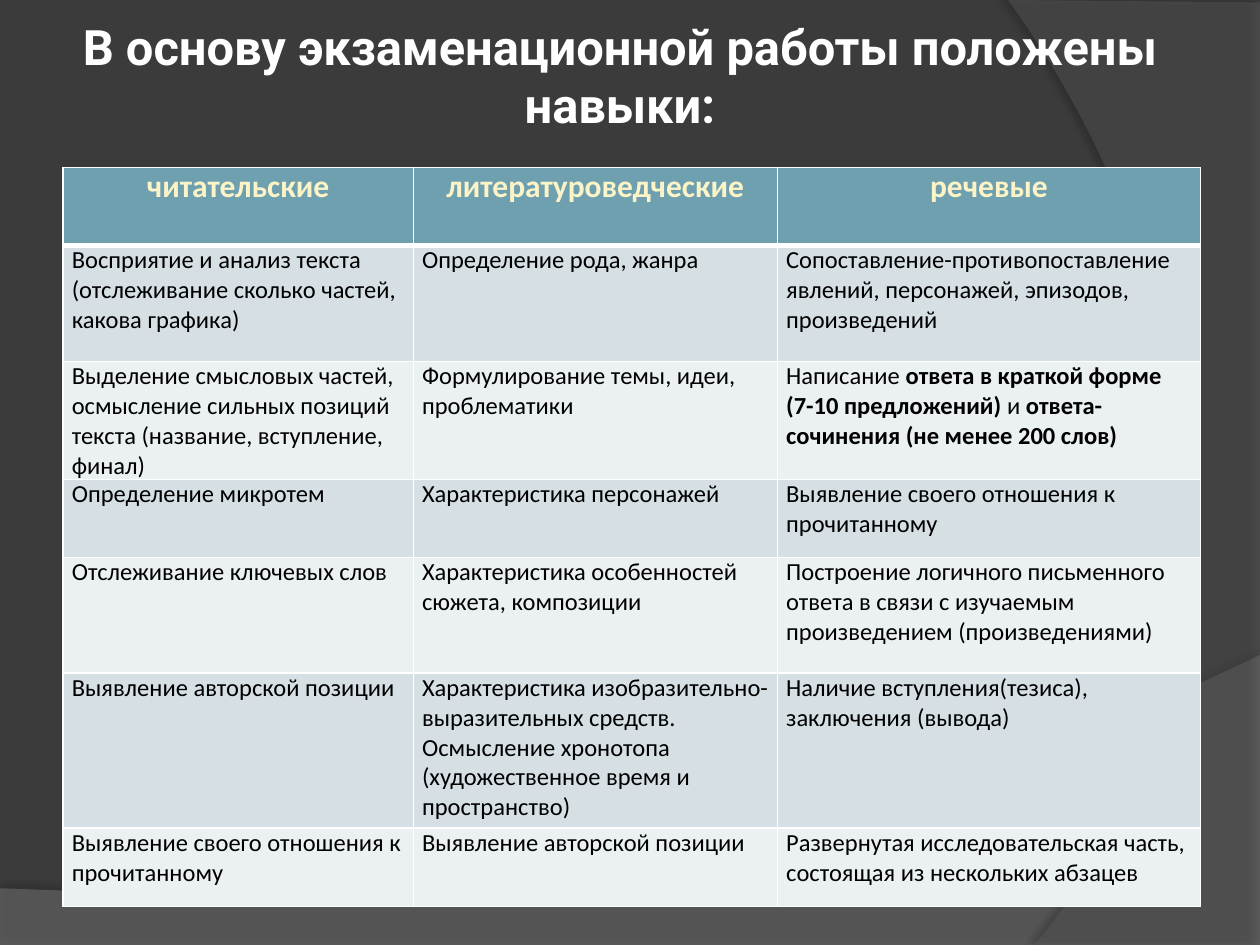
from lxml import etree
from pptx import Presentation
from pptx.dml.color import RGBColor
from pptx.enum.text import MSO_ANCHOR, PP_ALIGN
from pptx.oxml.ns import qn
from pptx.util import Inches, Pt

CENTER = PP_ALIGN.CENTER
LEFT = PP_ALIGN.LEFT
BOTTOM = MSO_ANCHOR.BOTTOM

COLORS = {
    "background": "3B3B3B", "wave": "7F7F7F", "arc": "5E5E5E", "shadow": "000000",
    "title": "FFFFFF", "border": "FFFFFF", "header": "6EA0B0",
    "header_text": "FCF4C7", "text": "000000", "odd": "D5DFE4", "even": "EBF0F2",
}
COLUMN_WIDTHS = [2.78, 2.89, 3.36]
ROW_HEIGHTS = [0.62, 0.92, 0.92, 0.62, 0.92, 1.23, 0.62]

# Text between ** marks is bold; a line feed starts a new paragraph.
ROWS = [
    ["читательские", "литературоведческие", "речевые"],
    ["Восприятие и анализ текста\n(отслеживание сколько частей, какова графика)",
     "Определение рода, жанра",
     "Сопоставление-противопоставление явлений, персонажей, эпизодов, произведений"],
    ["Выделение смысловых частей, осмысление сильных позиций текста "
     "(название, вступление, финал)",
     "Формулирование темы, идеи, проблематики",
     "Написание **ответа в краткой форме (7-10 предложений)** и "
     "**ответа-сочинения (не менее 200 слов)**"],
    ["Определение микротем",
     "Характеристика персонажей",
     "Выявление своего отношения к прочитанному"],
    ["Отслеживание ключевых слов",
     "Характеристика особенностей сюжета, композиции",
     "Построение логичного письменного ответа в связи с изучаемым "
     "произведением (произведениями)"],
    ["Выявление авторской позиции",
     "Характеристика изобразительно-выразительных средств. Осмысление хронотопа "
     "(художественное время и пространство)",
     "Наличие вступления(тезиса), заключения (вывода)"],
    ["Выявление своего отношения к прочитанному",
     "Выявление авторской позиции",
     "Развернутая исследовательская часть, состоящая из нескольких абзацев"],
]


def rgb(name):
    return RGBColor.from_string(COLORS[name])


def add_color(parent, name, opacity=100):
    color = etree.SubElement(parent, qn("a:srgbClr"), val=COLORS[name])
    etree.SubElement(color, qn("a:alpha"), val=str(opacity * 1000))


def curve(start, control1, control2, end, steps=40):
    """Return points along a cubic Bezier curve."""
    points = []
    for step in range(steps + 1):
        t = step / steps
        weights = ((1 - t) ** 3, 3 * t * (1 - t) ** 2, 3 * t ** 2 * (1 - t), t ** 3)
        points.append(tuple(sum(weight * point[axis] for weight, point in
                                zip(weights, (start, control1, control2, end)))
                            for axis in (0, 1)))
    return points


def add_backdrop(slide, points, color, opacity, shadow_opacity, distance, direction):
    """Add a translucent outline with a soft shadow."""
    start, *others = [(Inches(x), Inches(y)) for x, y in points]
    builder = slide.shapes.build_freeform(*start)
    builder.add_line_segments(others, close=True)
    shape = builder.convert_to_shape()
    shape.fill.solid()
    shape.fill.fore_color.rgb = rgb(color)
    shape.line.fill.background()
    fill_color = shape._element.spPr.find(qn("a:solidFill"))[0]
    etree.SubElement(fill_color, qn("a:alpha"), val=str(opacity * 1000))
    shape.shadow.inherit = False
    effects = shape._element.spPr.find(qn("a:effectLst"))
    shadow = etree.SubElement(
        effects, qn("a:outerShdw"), blurRad=str(Pt(4)), dist=str(Pt(distance)),
        dir=str(direction * 60000), algn="ctr", rotWithShape="0")
    add_color(shadow, "shadow", shadow_opacity)


def format_run(run, font, size, color, bold):
    run.font.name = font
    run.font.size = Pt(size)
    run.font.bold = bold
    run.font.color.rgb = rgb(color)


def add_title(slide, text):
    box = slide.shapes.add_textbox(Inches(0.31), Inches(0.3), Inches(9.22), Inches(1.25))
    frame = box.text_frame
    frame.word_wrap = True
    frame.vertical_anchor = BOTTOM
    frame.margin_left = frame.margin_right = frame.margin_top = Inches(0.05)
    frame.margin_bottom = Inches(0.49)
    frame.text = text
    paragraph = frame.paragraphs[0]
    paragraph.alignment = CENTER
    format_run(paragraph.runs[0], "Roboto", 27.9, "title", True)


def set_borders(cell, row):
    widths = {"L": 1, "R": 1, "T": 3 if row == 1 else 1, "B": 3 if row == 0 else 1}
    properties = cell._tc.get_or_add_tcPr()
    for side, width in widths.items():
        line = etree.SubElement(properties, qn(f"a:ln{side}"), w=str(Pt(width)))
        add_color(etree.SubElement(line, qn("a:solidFill")), "border")


def fill_cell(cell, text, row):
    header = row == 0
    cell.margin_left = cell.margin_right = Inches(0.07)
    cell.margin_top = cell.margin_bottom = 0
    set_borders(cell, row)
    cell.fill.solid()
    cell.fill.fore_color.rgb = rgb("header" if header else "odd" if row % 2 else "even")
    frame = cell.text_frame
    for index, line in enumerate(text.split("\n")):
        paragraph = frame.add_paragraph() if index else frame.paragraphs[0]
        paragraph.alignment = CENTER if header else LEFT
        for part, piece in enumerate(line.split("**")):
            if piece:
                run = paragraph.add_run()
                run.text = piece
                format_run(run, "Calibri", 18 if header else 14,
                           "header_text" if header else "text", header or part % 2 == 1)


def add_skills_table(slide):
    table = slide.shapes.add_table(
        len(ROWS), len(COLUMN_WIDTHS), Inches(0.5), Inches(1.33),
        Inches(sum(COLUMN_WIDTHS)), Inches(sum(ROW_HEIGHTS))).table
    for column, width in zip(table.columns, COLUMN_WIDTHS):
        column.width = Inches(width)
    for row, height in enumerate(ROW_HEIGHTS):
        table.rows[row].height = Inches(height)
        for column, text in enumerate(ROWS[row]):
            fill_cell(table.cell(row, column), text, row)


def main():
    presentation = Presentation()
    presentation.slide_width = Inches(10)
    presentation.slide_height = Inches(7.5)
    slide = presentation.slides.add_slide(presentation.slide_layouts[6])
    slide.background.fill.solid()
    slide.background.fill.fore_color.rgb = rgb("background")

    wave = [(0, 7.5), (10, 7.5)] + curve((10, 5.2), (5.59, 7.29), (3.91, 7.19), (0, 7.05))
    arc = [(10, 0.02), (10, 7.5)] + curve((8.21, 7.5), (9.35, 6.19), (10.18, 3), (8, 0))
    add_backdrop(slide, wave, "wave", 45, 35, 3.5, 270)
    add_backdrop(slide, arc, "arc", 40, 45, 4, 180)
    add_title(slide, "В основу экзаменационной работы положены навыки:")
    add_skills_table(slide)
    presentation.save("out.pptx")


if __name__ == "__main__":
    main()
